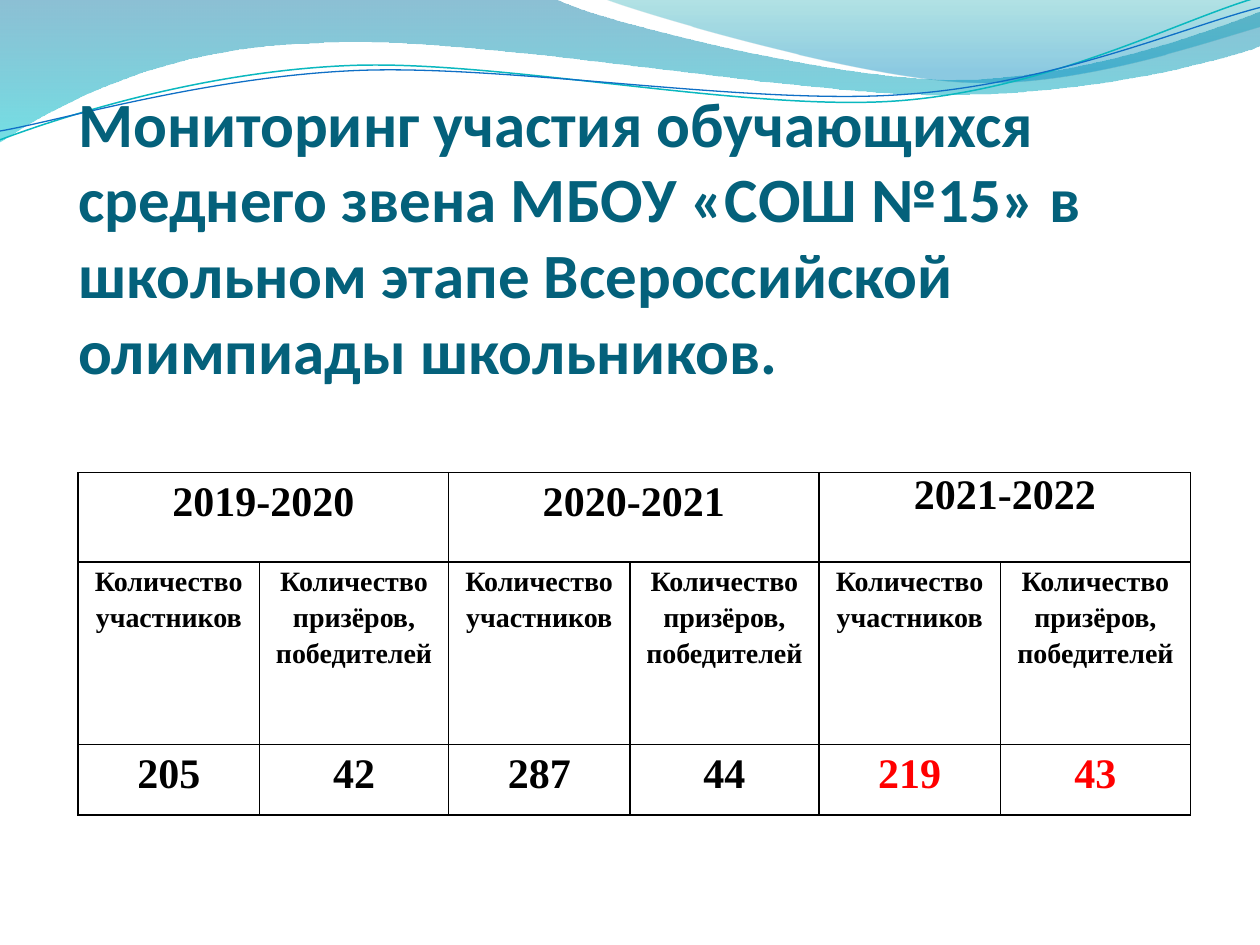
from math import cos, radians, sin
from lxml import etree
from pptx import Presentation
from pptx.dml.color import RGBColor
from pptx.enum.text import MSO_ANCHOR, MSO_AUTO_SIZE, PP_ALIGN
from pptx.oxml.ns import qn
from pptx.util import Inches, Pt

LEFT, CENTER = PP_ALIGN.LEFT, PP_ALIGN.CENTER
BOTTOM, TOP = MSO_ANCHOR.BOTTOM, MSO_ANCHOR.TOP
FIXED = MSO_AUTO_SIZE.NONE
SERIF = "Times New Roman"
BLACK, RED = "000000", "FF0000"
TILT = 357.3

TITLE = ("Мониторинг участия обучающихся среднего звена МБОУ «СОШ №15» "
         "в школьном этапе Всероссийской олимпиады школьников.")
YEARS = [("2019-2020", 1.15), ("2020-2021", 1.15), ("2021-2022", 1)]
HEADS = ["Количество участников", "Количество призёров, победителей"]
COUNTS = [("205", BLACK), ("42", BLACK), ("287", BLACK),
          ("44", BLACK), ("219", RED), ("43", RED)]
COLS = [1.44, 1.5, 1.44, 1.5, 1.44, 1.51]
ROWS = [0.71, 1.45, 0.56]

WAVES = [
    ([
        [(0, 0)],
        [(4.4, -0.01)],
        [(4.76, 0.17), (6.64, 0.63), (7.58, 0.63)],
        [(8.53, 0.63), (9.58, 0.26), (10, 0.09)],
        [(10.01, 0.36)],
        [(9.83, 0.44), (8.7, 0.76), (7.46, 0.75)],
        [(6.22, 0.75), (3.82, 0.28), (2.57, 0.34)],
        [(1.29, 0.36), (0.46, 0.83), (-0.01, 1.13)],
        [(0, 0)],
    ], [(0, "0074A1", 45), (1, "00C6CF", 55)]),
    ([
        [(4.79, -0.01)],
        [(5.09, 0.11), (6.82, 0.62), (7.69, 0.65)],
        [(8.56, 0.69), (9.61, 0.32), (10, 0.21)],
        [(10, 0)],
        [(4.79, -0.01)],
    ], [(0, "00A1A9", 30), (0.8, "008BBF", 45)]),
]
LINES = [
    ([
        [(0, 1.11)],
        [(0.48, 0.93), (1.58, 0.57), (2.77, 0.52)],
        [(3.95, 0.47), (5.93, 0.89), (7.13, 0.8)],
        [(8.33, 0.71), (9.38, 0.15), (9.98, -0.02)],
    ], (4.99, 0.57), "0AB8BF", 0.85),
    ([
        [(0, 1.04)],
        [(0.47, 0.96), (1.64, 0.61), (2.83, 0.56)],
        [(4.03, 0.51), (5.97, 0.84), (7.17, 0.75)],
        [(8.36, 0.67), (9.41, 0.21), (10, 0.06)],
    ], (5, 0.59), "0F6FC6", 0.75),
]


def rgb(code):
    return RGBColor.from_string(code)


def turn(point, mid):
    angle = radians(360 - TILT)
    x, y = point[0] - mid[0], point[1] - mid[1]
    return (mid[0] + x * cos(angle) - y * sin(angle),
            mid[1] + x * sin(angle) + y * cos(angle))


def draw(slide, parts, close):
    pts = [(Inches(x), Inches(y)) for part in parts for x, y in part]
    pen = slide.shapes.build_freeform(*pts[0])
    pen.add_line_segments(pts[1:], close=close)
    shape = pen.convert_to_shape()
    shape.shadow.inherit = False
    sides = iter(list(shape.element.iter(qn("a:lnTo"))))
    for part in parts[1:]:
        first, *rest = [next(sides) for point in part]
        if rest:
            curve = etree.Element(qn("a:cubicBezTo"))
            first.addprevious(curve)
            for side in (first, *rest):
                curve.append(side[0])
                side.getparent().remove(side)
    return shape


def add_wave(slide, parts, stops):
    shape = draw(slide, parts, True)
    shape.line.fill.background()
    shape.fill.gradient()
    shape.fill.gradient_angle = 270
    for stop, (pos, code, alpha) in zip(shape.fill.gradient_stops, stops):
        stop.position = pos
        stop.color.rgb = rgb(code)
    tones = shape.element.spPr.iter(qn("a:srgbClr"))
    for tone, (pos, code, alpha) in zip(tones, stops):
        etree.SubElement(tone, qn("a:alpha"), val=str(alpha * 1000))


def add_line(slide, parts, mid, code, width):
    flat = [[turn(point, mid) for point in part] for part in parts]
    shape = draw(slide, flat, False)
    shape.rotation = TILT
    shape.fill.background()
    shape.line.color.rgb = rgb(code)
    shape.line.width = Pt(width)


def write(frame, text, size, font, code, align, space=1):
    para = frame.paragraphs[0]
    para.alignment = align
    para.line_spacing = space
    run = para.add_run()
    run.text = text
    run.font.size = Pt(size)
    run.font.name = font
    run.font.bold = True
    run.font.color.rgb = rgb(code)


def add_title(slide):
    title = slide.shapes.title
    title.left, title.top = Inches(0.62), Inches(2.42)
    title.width, title.height = Inches(9), Inches(1.25)
    frame = title.text_frame
    frame.word_wrap = True
    frame.auto_size = FIXED
    frame.vertical_anchor = BOTTOM
    frame.margin_left = frame.margin_right = 0
    frame.margin_top = Inches(0.05)
    frame.margin_bottom = Inches(0.6)
    write(frame, TITLE, 36, "Calibri", "04617B", LEFT)
    title.element.getparent().append(title.element)


def style(cell):
    cell.margin_left = cell.margin_right = Inches(0.07)
    cell.margin_top = cell.margin_bottom = 0
    cell.vertical_anchor = TOP
    props = cell._tc.get_or_add_tcPr()
    for side in "LRTB":
        edge = etree.SubElement(props, qn("a:ln" + side), w=str(Pt(1)))
        fill = etree.SubElement(edge, qn("a:solidFill"))
        etree.SubElement(fill, qn("a:srgbClr"), val=BLACK)
    cell.fill.background()


def add_grid(slide):
    table = slide.shapes.add_table(
        len(ROWS), len(COLS), Inches(0.62), Inches(3.75),
        Inches(sum(COLS)), Inches(sum(ROWS))).table
    table.first_row = table.horz_banding = False
    for col, width in zip(table.columns, COLS):
        col.width = Inches(width)
    for row, height in zip(table.rows, ROWS):
        row.height = Inches(height)
    for cell in table.iter_cells():
        style(cell)
    for i, (year, space) in enumerate(YEARS):
        cell = table.cell(0, 2 * i)
        cell.merge(table.cell(0, 2 * i + 1))
        write(cell.text_frame, year, 24, SERIF, BLACK, CENTER, space)
    for i, (count, code) in enumerate(COUNTS):
        write(table.cell(1, i).text_frame, HEADS[i % 2], 16, SERIF, BLACK,
              CENTER, 1.15)
        write(table.cell(2, i).text_frame, count, 24, SERIF, code,
              CENTER, 1.15)


def main():
    deck = Presentation()
    deck.slide_width, deck.slide_height = Inches(10), Inches(7.5)
    slide = deck.slides.add_slide(deck.slide_layouts[5])
    for wave in WAVES:
        add_wave(slide, *wave)
    for line in LINES:
        add_line(slide, *line)
    add_title(slide)
    add_grid(slide)
    deck.save("out.pptx")


if __name__ == "__main__":
    main()
